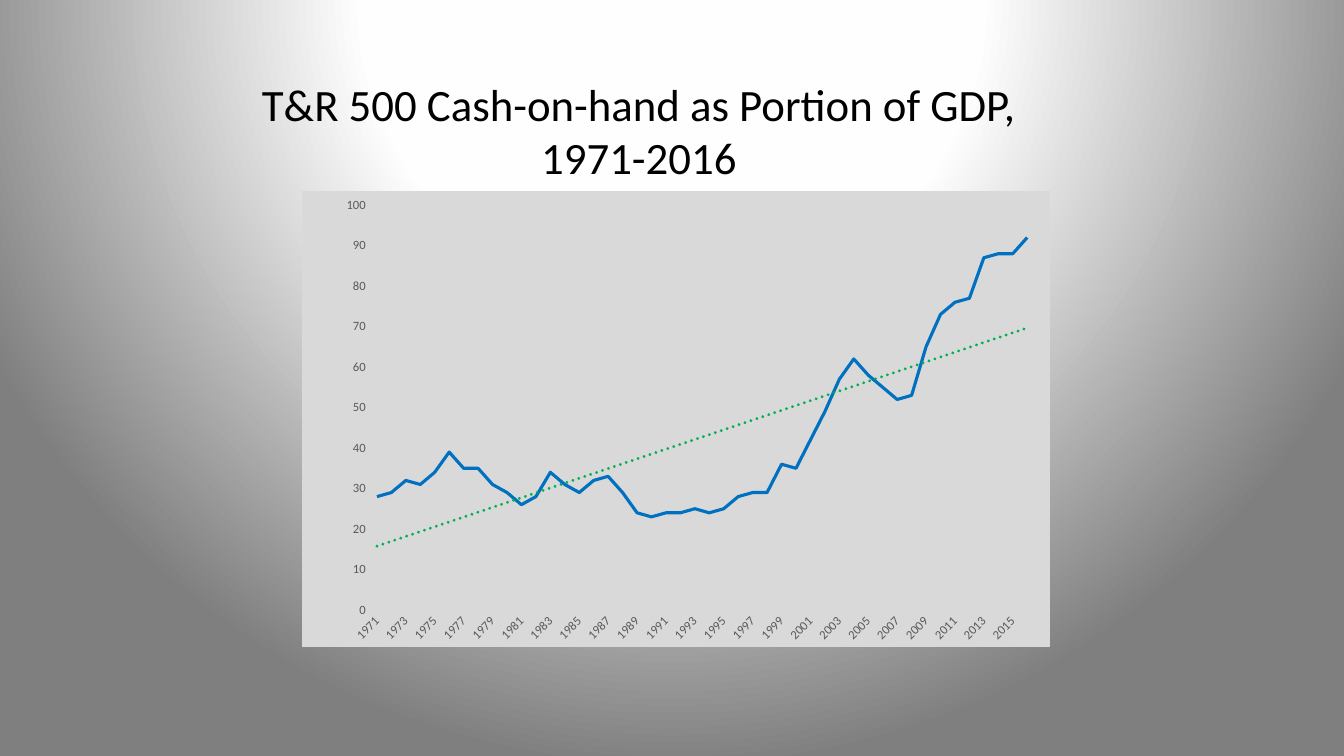
from lxml.etree import SubElement
from pptx import Presentation
from pptx.chart.data import CategoryChartData
from pptx.dml.color import RGBColor
from pptx.enum.chart import XL_CHART_TYPE, XL_MARKER_STYLE, XL_TICK_MARK
from pptx.enum.text import MSO_ANCHOR, PP_ALIGN
from pptx.oxml import parse_xml
from pptx.oxml.ns import nsdecls, qn
from pptx.util import Pt

EMU_PER_PX = 914400 / 100.8
FONT = "Calibri"
BLACK = RGBColor(0x00, 0x00, 0x00)
LABEL_GRAY = RGBColor(0x59, 0x59, 0x59)
PANEL_GRAY = RGBColor(0xD9, 0xD9, 0xD9)
CASH_BLUE = RGBColor(0x00, 0x70, 0xC0)
TREND_GREEN = RGBColor(0x00, 0xB0, 0x50)
BACKGROUND_STOPS = [
    (0, RGBColor(0xFF, 0xFF, 0xFF)),
    (40, RGBColor(0xFE, 0xFE, 0xFE)),
    (100, RGBColor(0x7F, 0x7F, 0x7F)),
]

FIRST_YEAR = 1971
CASH_SHARES = [
    28, 29, 32, 31, 34, 39, 35, 35, 31, 29, 26, 28, 34, 31, 29, 32,
    33, 29, 24, 23, 24, 24, 25, 24, 25, 28, 29, 29, 36, 35, 42, 49,
    57, 62, 58, 55, 52, 53, 65, 73, 76, 77, 87, 88, 88, 92,
]


def px(length):
    return round(length * EMU_PER_PX)


def set_font(font, size, color):
    font.name = FONT
    font.size = Pt(size)
    font.color.rgb = color


def paint_background(slide):
    slide.background.fill.gradient()
    gradient = slide.element.find(".//" + qn("a:gradFill"))
    stops = "".join(
        f'<a:gs pos="{percent * 1000}"><a:srgbClr val="{color}"/></a:gs>'
        for percent, color in BACKGROUND_STOPS
    )
    gradient.getparent().replace(gradient, parse_xml(
        f'<a:gradFill {nsdecls("a")} rotWithShape="1"><a:gsLst>{stops}</a:gsLst>'
        '<a:path path="circle">'
        '<a:fillToRect l="50000" t="-80000" r="50000" b="180000"/>'
        '</a:path></a:gradFill>'
    ))


def add_title(slide, left, top, width, height):
    title = slide.shapes.title
    title.left, title.top = px(left), px(top)
    title.width, title.height = px(width), px(height)
    frame = title.text_frame
    frame.word_wrap = True
    frame.vertical_anchor = MSO_ANCHOR.MIDDLE
    paragraph = frame.paragraphs[0]
    paragraph.alignment = PP_ALIGN.CENTER
    run = paragraph.add_run()
    run.text = "T&R 500 Cash-on-hand as Portion of GDP, 1971-2016"
    set_font(run.font, 32, BLACK)


def style_axes(chart):
    years, shares = chart.category_axis, chart.value_axis
    for axis in (years, shares):
        axis.major_tick_mark = axis.minor_tick_mark = XL_TICK_MARK.NONE
        set_font(axis.tick_labels.font, 9, LABEL_GRAY)

    # Every second year, slanted
    years.format.line.color.rgb = PANEL_GRAY
    years.format.line.width = Pt(0.75)
    years_xml = years._element
    years_xml.find(".//" + qn("a:bodyPr")).set("rot", "-2700000")
    years_xml.find(qn("c:lblOffset")).addnext(
        parse_xml(f'<c:tickLblSkip {nsdecls("c")} val="2"/>'))

    # Shares from 0 to 100
    shares.minimum_scale, shares.maximum_scale = 0, 100
    shares.major_unit = 10
    shares.format.line.fill.background()
    shares.has_major_gridlines = True
    gridline = shares.major_gridlines.format.line
    gridline.color.rgb = PANEL_GRAY
    gridline.width = Pt(0.75)


def style_series(series):
    series.smooth = False
    series.marker.style = XL_MARKER_STYLE.NONE
    series.format.line.color.rgb = CASH_BLUE
    series.format.line.width = Pt(2.25)
    series._element.find(qn("c:cat")).addprevious(parse_xml(
        f'<c:trendline {nsdecls("c", "a")}><c:spPr>'
        f'<a:ln w="{Pt(2.25)}" cap="rnd">'
        f'<a:solidFill><a:srgbClr val="{TREND_GREEN}"/></a:solidFill>'
        '<a:prstDash val="sysDot"/></a:ln></c:spPr>'
        '<c:trendlineType val="linear"/><c:dispRSqr val="0"/><c:dispEq val="0"/>'
        '</c:trendline>'
    ))


def place_plot(chart, left, top, width, height):
    plot_area = chart._chartSpace.find(".//" + qn("c:plotArea"))
    for old_layout in plot_area.findall(qn("c:layout")):
        plot_area.remove(old_layout)
    layout = parse_xml(f'<c:layout {nsdecls("c")}><c:manualLayout/></c:layout>')
    settings = [
        ("layoutTarget", "inner"), ("xMode", "edge"), ("yMode", "edge"),
        ("x", left), ("y", top), ("w", width), ("h", height),
    ]
    for name, value in settings:
        SubElement(layout[0], qn("c:" + name)).set("val", str(value))
    plot_area.insert(0, layout)


def paint_panel(chart):
    solid = f'<a:solidFill><a:srgbClr val="{PANEL_GRAY}"/></a:solidFill>'
    chart._chartSpace.find(qn("c:chart")).addnext(parse_xml(
        f'<c:spPr {nsdecls("c", "a")}>{solid}'
        f'<a:ln w="{Pt(0.75)}">{solid}</a:ln></c:spPr>'
    ))


def add_cash_chart(slide, left, top, width, height):
    data = CategoryChartData()
    data.categories = [str(FIRST_YEAR + i) for i in range(len(CASH_SHARES))]
    data.add_series("Series 1", CASH_SHARES)
    chart = slide.shapes.add_chart(
        XL_CHART_TYPE.LINE, px(left), px(top), px(width), px(height), data
    ).chart
    chart.has_title = False
    chart.has_legend = False
    set_font(chart.font, 10, BLACK)
    chart.plots[0].vary_by_categories = False
    style_axes(chart)
    style_series(chart.plots[0].series[0])
    place_plot(chart, 0.09, 0.03, 0.89, 0.89)
    paint_panel(chart)


def main():
    presentation = Presentation()
    presentation.slide_width, presentation.slide_height = px(1344), px(756)
    slide = presentation.slides.add_slide(presentation.slide_layouts[5])
    paint_background(slide)
    add_title(slide, 219, 58, 840, 144)
    add_cash_chart(slide, 302, 191, 748, 456)
    presentation.save("out.pptx")


if __name__ == "__main__":
    main()
